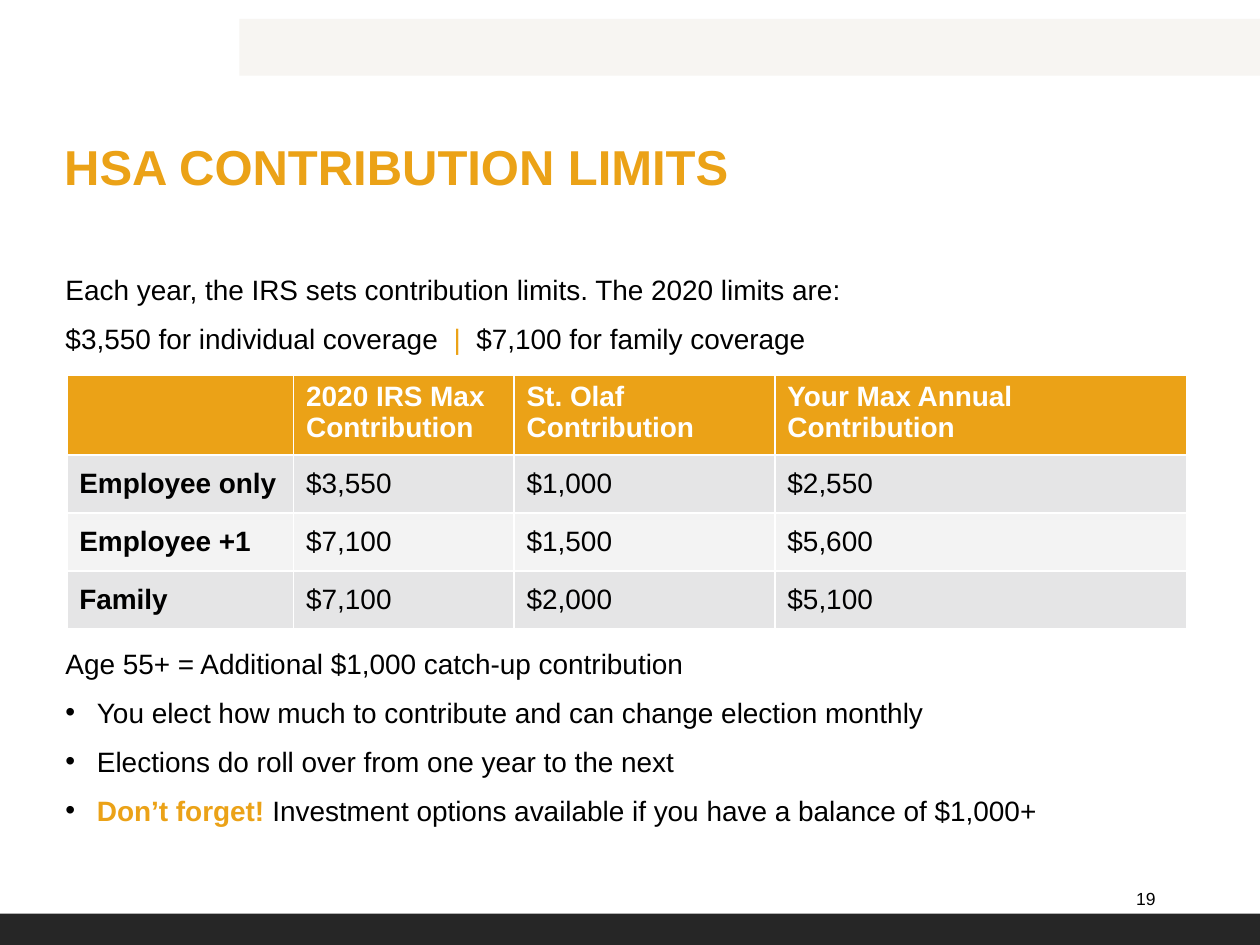
from dataclasses import dataclass

from lxml import etree
from pptx import Presentation, util as u
from pptx.dml.color import RGBColor
from pptx.enum import shapes, text
from pptx.oxml import ns

WIDTH, HEIGHT = u.Inches(10), u.Inches(7.5)
FONT = "Arial"
GOLD = RGBColor(0xEB, 0xA2, 0x17)
BLACK = RGBColor(0, 0, 0)
WHITE = RGBColor(255, 255, 255)
CREAM = RGBColor(0xF7, 0xF5, 0xF2)
CHARCOAL = RGBColor(0x26, 0x26, 0x26)
BANDS = (RGBColor(0xE5, 0xE5, 0xE6), RGBColor(0xF3, 0xF3, 0xF3))
COLUMN_WIDTHS = (1.8, 1.75, 2.07, 3.27)
ROW_HEIGHTS = (0.6, 0.46, 0.46, 0.46)
LIMITS = (
    ("", "2020 IRS Max Contribution", "St. Olaf Contribution", "Your Max Annual Contribution"),
    ("Employee only", "$3,550", "$1,000", "$2,550"),
    ("Employee +1", "$7,100", "$1,500", "$5,600"),
    ("Family", "$7,100", "$2,000", "$5,100"),
)


@dataclass(frozen=True)
class Area:
    """Rectangle given in shares of the slide's size."""

    left: float
    top: float
    width: float
    height: float

    def box(self) -> tuple[int, int, int, int]:
        """Return the rectangle in slide units."""
        return (round(self.left * WIDTH), round(self.top * HEIGHT),
                round(self.width * WIDTH), round(self.height * HEIGHT))


@dataclass(frozen=True)
class Run:
    """Stretch of text in one style."""

    words: str
    color: RGBColor = BLACK
    bold: bool = False


@dataclass(frozen=True)
class Line:
    """Paragraph made of runs, with or without a bullet."""

    runs: tuple[Run, ...]
    bullet: bool = False


INTRODUCTION = (
    Line((Run("Each year, the IRS sets contribution limits. The 2020 limits are:"),)),
    Line((Run("$3,550 for individual coverage  "), Run("|", GOLD),
          Run("  $7,100 for family coverage"))),
)
NOTES = (
    Line((Run("Age 55+ = Additional $1,000 catch-up contribution"),)),
    Line((Run("You elect how much to contribute and can change election monthly"),), True),
    Line((Run("Elections do roll over from one year to the next"),), True),
    Line((Run("Don’t forget! ", GOLD, True),
          Run("Investment options available if you have a balance of $1,000+")), True),
)


def add_band(slide, area: Area, color: RGBColor) -> None:
    """Draw a plain filled band."""
    shape = slide.shapes.add_shape(shapes.MSO_SHAPE.RECTANGLE, *area.box())
    shape.shadow.inherit = False
    shape.fill.solid()
    shape.fill.fore_color.rgb = color
    shape.line.fill.background()


def set_font(font, size: float, color: RGBColor, bold: bool = False) -> None:
    """Apply the slide's typeface with a size, colour and weight."""
    font.name, font.size, font.bold = FONT, u.Pt(size), bold
    font.color.rgb = color


def add_frame(slide, area: Area, vertical: float = 0, right: float = 0):
    """Add a wrapping text box and return its text frame."""
    frame = slide.shapes.add_textbox(*area.box()).text_frame
    frame.word_wrap = True
    frame.margin_left, frame.margin_right = 0, u.Inches(right)
    frame.margin_top = frame.margin_bottom = u.Inches(vertical)
    return frame


def add_bullet(paragraph) -> None:
    """Give a paragraph a hanging black bullet."""
    properties = paragraph._p.get_or_add_pPr()
    properties.set("marL", str(u.Inches(0.25)))
    properties.set("indent", str(-u.Inches(0.25)))
    color = etree.SubElement(properties, ns.qn("a:buClr"))
    etree.SubElement(color, ns.qn("a:srgbClr"), val=str(BLACK))
    etree.SubElement(properties, ns.qn("a:buFont"), typeface=FONT)
    etree.SubElement(properties, ns.qn("a:buChar"), char="•")


def add_body(slide, area: Area, lines: tuple[Line, ...]) -> None:
    """Write body paragraphs with even spacing."""
    frame = add_frame(slide, area, vertical=0.05)
    for index, line in enumerate(lines):
        paragraph = frame.paragraphs[0] if index == 0 else frame.add_paragraph()
        paragraph.line_spacing, paragraph.space_after = 1.14, u.Pt(6)
        if line.bullet:
            add_bullet(paragraph)
        for part in line.runs:
            run = paragraph.add_run()
            run.text = part.words
            set_font(run.font, 16, part.color, part.bold)


def add_borders(cell) -> None:
    """Draw white one-point borders, placed ahead of the cell's fill."""
    properties = cell._tc.get_or_add_tcPr()
    for index, side in enumerate(("lnL", "lnR", "lnT", "lnB")):
        border = etree.Element(ns.qn(f"a:{side}"), w=str(u.Pt(1)))
        fill = etree.SubElement(border, ns.qn("a:solidFill"))
        etree.SubElement(fill, ns.qn("a:srgbClr"), val=str(WHITE))
        properties.insert(index, border)


def add_limits(slide, area: Area) -> None:
    """Build the table of contribution limits."""
    table = slide.shapes.add_table(len(LIMITS), len(COLUMN_WIDTHS), *area.box()).table
    for column, width in zip(table.columns, COLUMN_WIDTHS):
        column.width = u.Inches(width)
    for r, (row, height) in enumerate(zip(table.rows, ROW_HEIGHTS)):
        row.height = u.Inches(height)
        header = r == 0
        for c, cell in enumerate(row.cells):
            cell.text = LIMITS[r][c]
            cell.vertical_anchor = text.MSO_ANCHOR.TOP if header else text.MSO_ANCHOR.MIDDLE
            cell.fill.solid()
            cell.fill.fore_color.rgb = GOLD if header else BANDS[(r - 1) % 2]
            add_borders(cell)
            set_font(cell.text_frame.paragraphs[0].font, 16,
                     WHITE if header else BLACK, header or c == 0)


def main() -> None:
    """Build the contribution limits slide."""
    presentation = Presentation()
    presentation.slide_width, presentation.slide_height = WIDTH, HEIGHT
    slide = presentation.slides.add_slide(presentation.slide_layouts[6])

    add_band(slide, Area(0.19, 0.02, 0.81, 0.06), CREAM)
    add_body(slide, Area(0.052, 0.277, 0.88, 0.12), INTRODUCTION)
    add_body(slide, Area(0.052, 0.673, 0.88, 0.21), NOTES)

    title = add_frame(slide, Area(0.051, 0.144, 0.88, 0.067)).paragraphs[0]
    title.text = "HSA CONTRIBUTION LIMITS"
    set_font(title.font, 28, GOLD, True)

    add_band(slide, Area(0, 29 / 30, 1, 1 / 30), CHARCOAL)
    number_frame = add_frame(slide, Area(0.894, 0.924, 0.033, 0.053), right=0.1)
    number_frame.vertical_anchor = text.MSO_ANCHOR.MIDDLE
    number = number_frame.paragraphs[0]
    number.text = "19"
    number.alignment = text.PP_ALIGN.RIGHT
    set_font(number.font, 10, BLACK)

    add_limits(slide, Area(0.053, 0.397, 0.889, 0.264))
    presentation.save("out.pptx")


if __name__ == "__main__":
    main()
